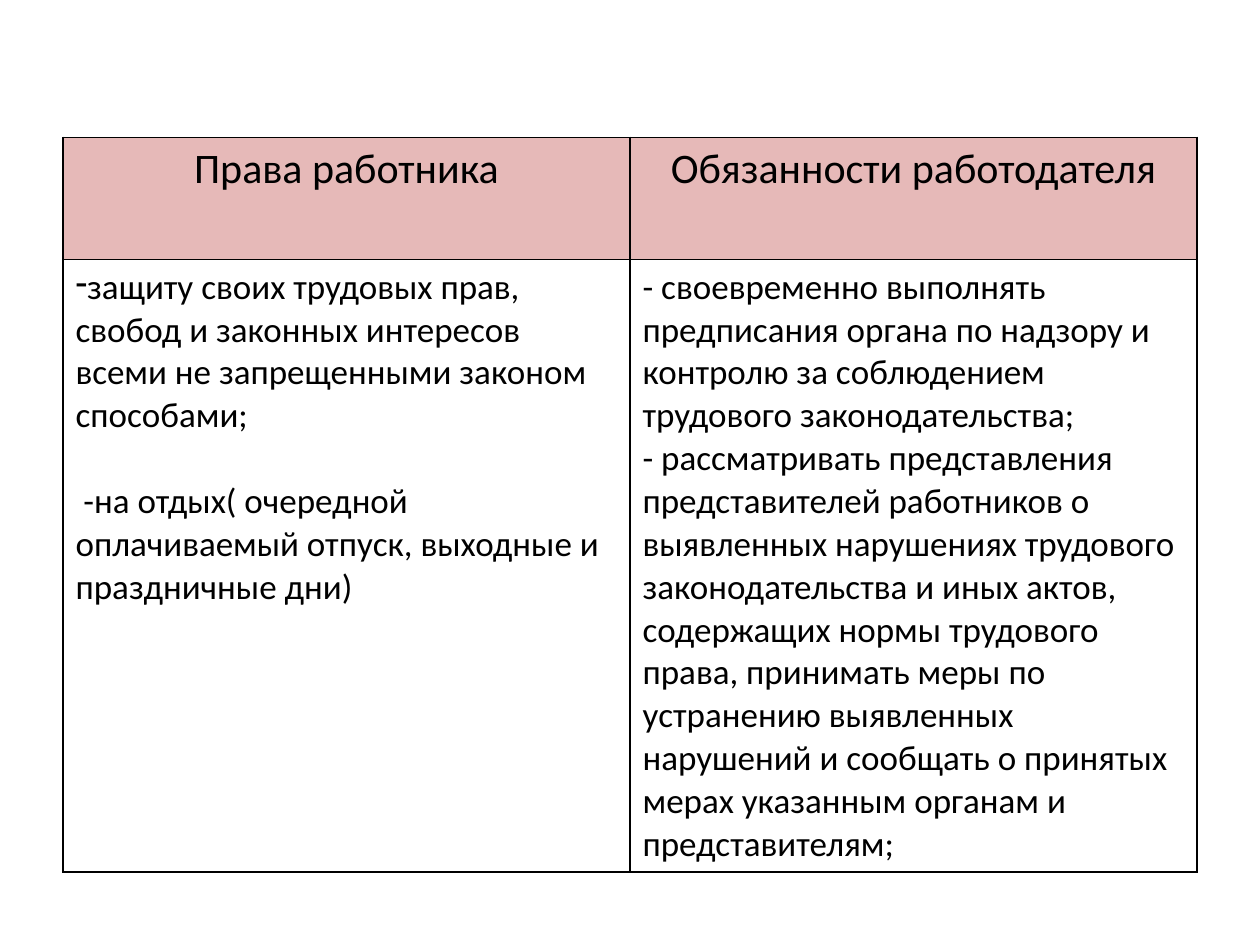
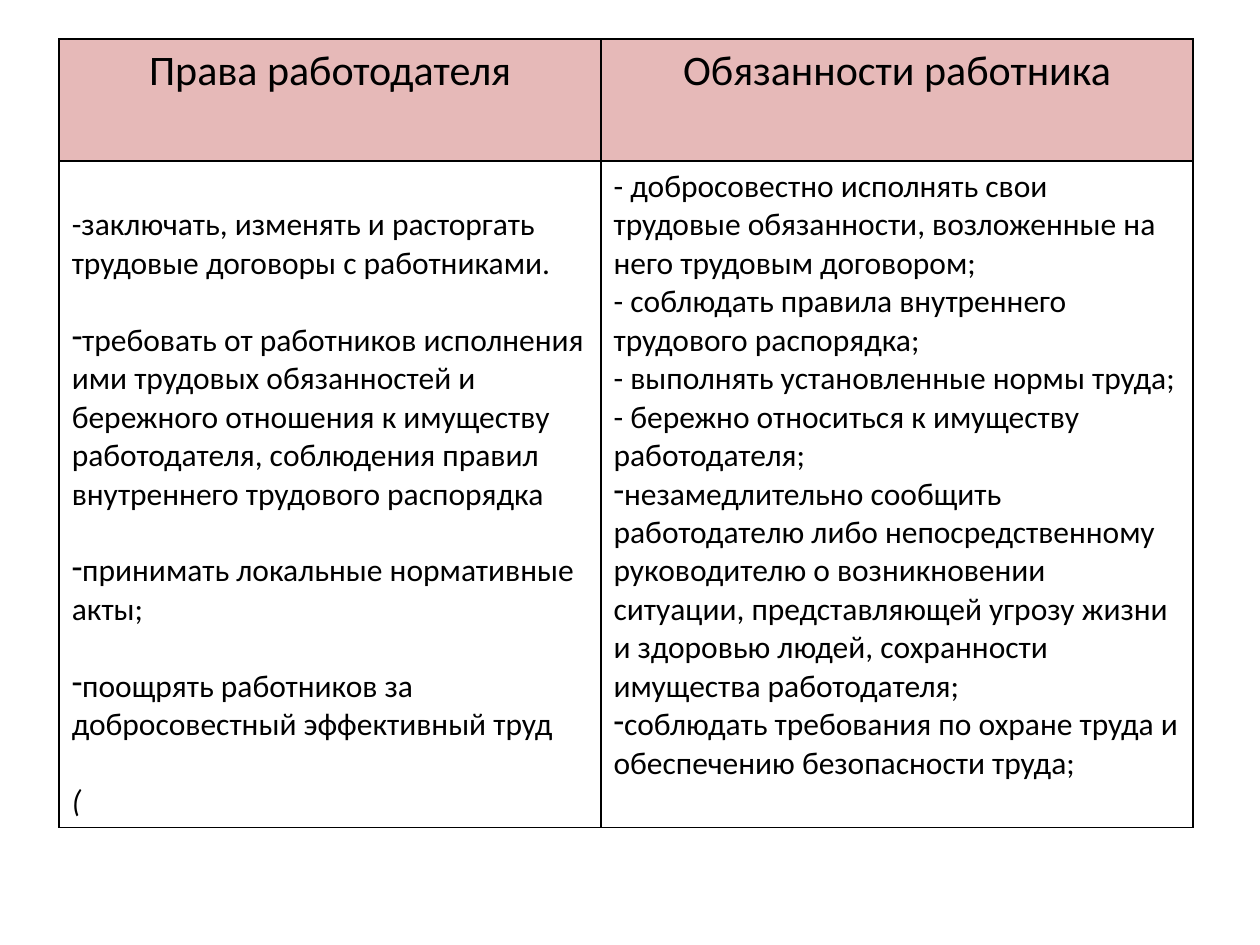
from pptx import Presentation
from pptx.dml.color import RGBColor
from pptx.enum.text import PP_ALIGN as Align
from pptx.oxml.ns import qn
from pptx.util import Inches, Pt
from lxml.etree import SubElement

PINK = RGBColor(0xE6, 0xB9, 0xB8)
BLACK = RGBColor(0, 0, 0)
FONT = "Calibri"
HEADER_SIZE = 24
HEADER_HEIGHT = 0.97
LINE_FACTOR = 1.22  # height of one text line relative to its font size
CELL_MARGIN = 0.05

# Paragraphs that start with BULLET get a real "-" bullet
BULLET = "•"

WORKER_RIGHTS = [
    BULLET + "защиту своих трудовых прав, свобод и законных интересов "
    "всеми не запрещенными законом способами;",
    " -на отдых( очередной оплачиваемый отпуск, выходные и праздничные дни)",
]
EMPLOYER_DUTIES = [
    "- своевременно выполнять предписания органа по надзору и контролю "
    "за соблюдением трудового законодательства;",
    "- рассматривать представления представителей работников о выявленных "
    "нарушениях трудового законодательства и иных актов, содержащих нормы "
    "трудового права, принимать меры по устранению выявленных нарушений и "
    "сообщать о принятых мерах указанным органам и представителям;",
]
EMPLOYER_RIGHTS = [
    "-заключать, изменять и расторгать трудовые договоры с работниками.",
    BULLET + "требовать от работников исполнения ими трудовых обязанностей и "
    "бережного отношения к имуществу работодателя, соблюдения правил "
    "внутреннего трудового распорядка",
    BULLET + "принимать локальные нормативные акты;",
    BULLET + "поощрять работников за добросовестный эффективный труд",
    "(",
]
WORKER_DUTIES = [
    "- добросовестно исполнять свои трудовые обязанности, возложенные на "
    "него трудовым договором;",
    "- соблюдать правила внутреннего трудового распорядка;",
    "- выполнять установленные нормы труда;",
    "- бережно относиться к имуществу работодателя;",
    BULLET + "незамедлительно сообщить работодателю либо непосредственному "
    "руководителю о возникновении ситуации, представляющей угрозу жизни и "
    "здоровью людей, сохранности имущества работодателя;",
    BULLET + "соблюдать требования по охране труда и обеспечению "
    "безопасности труда;",
]


def add_borders(cell):
    """Draw a thin black line on all four sides of the cell."""
    props = cell._tc.get_or_add_tcPr()
    for side in ("a:lnL", "a:lnR", "a:lnT", "a:lnB"):
        line = SubElement(props, qn(side), w=str(Pt(1)))
        fill = SubElement(line, qn("a:solidFill"))
        SubElement(fill, qn("a:srgbClr"), val=str(BLACK))


def add_dash_bullet(para):
    props = para._p.get_or_add_pPr()
    props.set("marL", "0")
    props.set("indent", "0")
    SubElement(props, qn("a:buFontTx"))
    SubElement(props, qn("a:buChar"), char="-")


def format_run(para, size):
    font = para.runs[0].font
    font.name, font.size, font.bold = FONT, Pt(size), False
    font.color.rgb = BLACK


def fill_header(cell, title):
    add_borders(cell)
    cell.fill.solid()
    cell.fill.fore_color.rgb = PINK
    cell.text_frame.text = title
    para = cell.text_frame.paragraphs[0]
    para.alignment = Align.CENTER
    format_run(para, HEADER_SIZE)


def fill_body(cell, items, size, gap):
    """Write the items, with gap points between neighbours."""
    add_borders(cell)
    cell.fill.background()
    cell.text_frame.text = "\n".join(item.lstrip(BULLET) for item in items)
    for index, (para, item) in enumerate(zip(cell.text_frame.paragraphs, items)):
        if index:
            para.space_before = Pt(gap)
        if item.startswith(BULLET):
            add_dash_bullet(para)
        format_run(para, size)


def add_comparison(page, box, widths, titles, columns, size):
    """Place a two-column table of rights and duties in the box."""
    left, top, width, height = box
    frame = page.shapes.add_table(2, 2, *(Inches(length) for length in box))
    table = frame.table
    table.first_row = table.horz_banding = False
    for column, column_width in zip(table.columns, widths):
        column.width = Inches(column_width)
    for row, row_height in zip(table.rows, (HEADER_HEIGHT, height - HEADER_HEIGHT)):
        row.height = Inches(row_height)
    # Only the rights in the left column are set one line apart
    gaps = (size * LINE_FACTOR, 0)
    for index, (title, items, gap) in enumerate(zip(titles, columns, gaps)):
        fill_header(table.cell(0, index), title)
        fill_body(table.cell(1, index), items, size, gap)
    return table


def build_worker_rights(deck, layout):
    add_comparison(
        deck.slides.add_slide(layout), (0.5, 1.09, 9, 5.83), (4.5, 4.5),
        ("Права работника", "Обязанности работодателя"),
        (WORKER_RIGHTS, EMPLOYER_DUTIES), 20)


def build_employer_rights(deck, layout):
    size = 18
    table = add_comparison(
        deck.slides.add_slide(layout), (0.47, 0.31, 9, 6.25), (4.3, 4.7),
        ("Права работодателя", "Обязанности работника"),
        (EMPLOYER_RIGHTS, WORKER_DUTIES), size)
    # The left text starts one line lower and ends in italics
    rights = table.cell(1, 0)
    rights.margin_top = Inches(CELL_MARGIN) + Pt(size * LINE_FACTOR)
    rights.text_frame.paragraphs[-1].runs[0].font.italic = True


def main():
    deck = Presentation()
    deck.slide_width, deck.slide_height = Inches(10), Inches(7.5)
    blank = deck.slide_layouts[6]
    build_worker_rights(deck, blank)
    build_employer_rights(deck, blank)
    deck.save("out.pptx")


if __name__ == "__main__":
    main()
